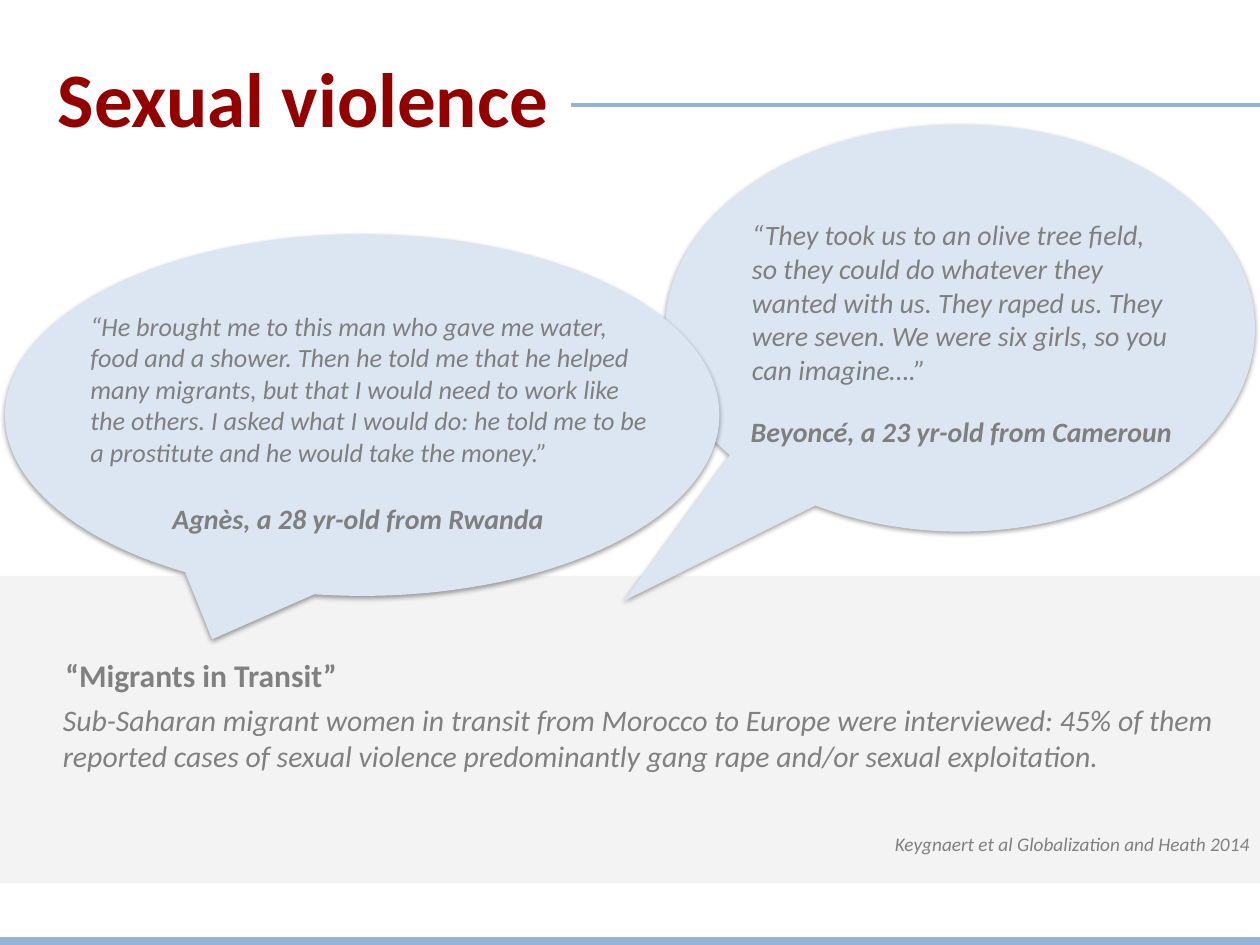
from lxml import etree
from pptx import Presentation
from pptx.dml.color import RGBColor
from pptx.enum.shapes import MSO_CONNECTOR, MSO_SHAPE
from pptx.enum.text import MSO_ANCHOR, PP_ALIGN
from pptx.oxml.ns import qn
from pptx.util import Inches, Pt

STRAIGHT = MSO_CONNECTOR.STRAIGHT
RECTANGLE, CALLOUT = MSO_SHAPE.RECTANGLE, MSO_SHAPE.OVAL_CALLOUT
TOP, MIDDLE = MSO_ANCHOR.TOP, MSO_ANCHOR.MIDDLE
LEFT, RIGHT = PP_ALIGN.LEFT, PP_ALIGN.RIGHT
FONT = "Calibri"
RED, GREY, QUOTE_GREY = "920000", "808080", "7F7F7F"
BLUE, PALE_BLUE, PANEL = "95B3D7", "DCE6F2", "F2F2F2"


def rgb(color):
    return RGBColor.from_string(color)


def add_filled(s, kind, box, color):
    sp = s.shapes.add_shape(kind, *map(Inches, box))
    sp.shadow.inherit = False
    sp.fill.solid()
    sp.fill.fore_color.rgb = rgb(color)
    sp.line.fill.background()
    return sp


def add_text(s, box, lines, size, color, bold=False, italic=False,
             align=LEFT, anchor=TOP, wrap=True):
    tf = s.shapes.add_textbox(*map(Inches, box)).text_frame
    tf.word_wrap = wrap
    tf.vertical_anchor = anchor
    for i, line in enumerate(lines):
        p = tf.add_paragraph() if i else tf.paragraphs[0]
        p.text = line
        p.alignment = align
        p.font.name = FONT
        p.font.size = Pt(size)
        p.font.bold = bold
        p.font.italic = italic
        p.font.color.rgb = rgb(color)


def add_rule(s, left, right, y, width):
    line = s.shapes.add_connector(STRAIGHT, Inches(left), Inches(y), Inches(right), Inches(y))
    line.line.color.rgb = rgb(BLUE)
    line.line.width = Pt(width)
    etree.SubElement(line._element.spPr, qn("a:effectLst"))


def add_soft_shadow(sp):
    effects = sp._element.spPr.find(qn("a:effectLst"))
    shadow = etree.SubElement(effects, qn("a:outerShdw"), blurRad=str(Pt(3.1)),
                              dist=str(Pt(1.6)), dir="5400000", rotWithShape="0")
    color = etree.SubElement(shadow, qn("a:srgbClr"), val="000000")
    etree.SubElement(color, qn("a:alpha"), val="38000")


def add_title(s, box):
    left, top, width, height = box
    add_text(s, (left, top, 5.58, height), ["Sexual violence"], 44, RED, bold=True, anchor=MIDDLE)
    add_rule(s, 4.53, left + width, 0.83, 2.25)


def add_panel(s, box):
    left, top, width, height = box
    panel = add_filled(s, RECTANGLE, box, PANEL)
    color = panel._element.spPr.find(qn("a:solidFill")).find(qn("a:srgbClr"))
    etree.SubElement(color, qn("a:alpha"), val="88000")
    add_text(s, (left + 0.42, top + 0.59, 2.38, 0.4), ["“Migrants in Transit”"],
             18, GREY, bold=True, wrap=False)
    add_text(s, (left + 0.4, top + 0.95, 9.68, 0.67),
             ["Sub-Saharan migrant women in transit from Morocco to Europe were interviewed: "
              "45% of them reported cases of sexual violence predominantly gang rape "
              "and/or sexual exploitation."], 17, GREY, italic=True)
    add_text(s, (left + width - 3.99, top + 1.99, 3.99, 0.29),
             ["Keygnaert et al Globalization and Heath 2014"], 11, GREY, italic=True, align=RIGHT)


def add_quote(s, box, tail, lines, size, quote_box, speaker, speaker_box):
    left, top = box[:2]
    bubble = add_filled(s, CALLOUT, box, PALE_BLUE)
    bubble.adjustments[0], bubble.adjustments[1] = tail
    add_soft_shadow(bubble)

    def inside(x, y, width, height):
        return left + x, top + y, width, height

    add_text(s, inside(*quote_box), lines, size, QUOTE_GREY, italic=True)
    add_text(s, inside(*speaker_box), [speaker], 16, QUOTE_GREY,
             bold=True, italic=True, wrap=False)


def main():
    prs = Presentation()
    prs.slide_width, prs.slide_height = Inches(10), Inches(7.5)
    s = prs.slides.add_slide(prs.slide_layouts[6])
    add_panel(s, (0, 4.57, 10.02, 2.44))
    add_title(s, (0.36, 0.21, 9.64, 1.11))
    add_rule(s, 0, 10, 7.48, 6)
    add_quote(s, (5.28, 0.99, 4.68, 3.23), (-0.57, 0.67),
              ["“They took us to an olive tree field,",
               "so they could do whatever they",
               "wanted with us. They raped us. They",
               "were seven. We were six girls, so you",
               "can imagine….”"],
              16, (0.59, 0.69, 3.7, 1.99),
              "Beyoncé, a 23 yr-old from Cameroun", (0.58, 2.25, 3.6, 0.37))
    add_quote(s, (0.04, 1.86, 5.67, 2.87), (-0.21, 0.62),
              ["“He brought me to this man who gave me water, food and a shower. "
               "Then he told me that he helped many migrants, but that I would need "
               "to work like the others. I asked what I would do: he told me to be "
               "a prostitute and he would take the money.”"],
              15, (0.58, 0.55, 4.66, 1.63),
              "Agnès, a 28 yr-old from Rwanda", (1.23, 2.07, 3.2, 0.37))
    prs.save("out.pptx")


if __name__ == "__main__":
    main()
